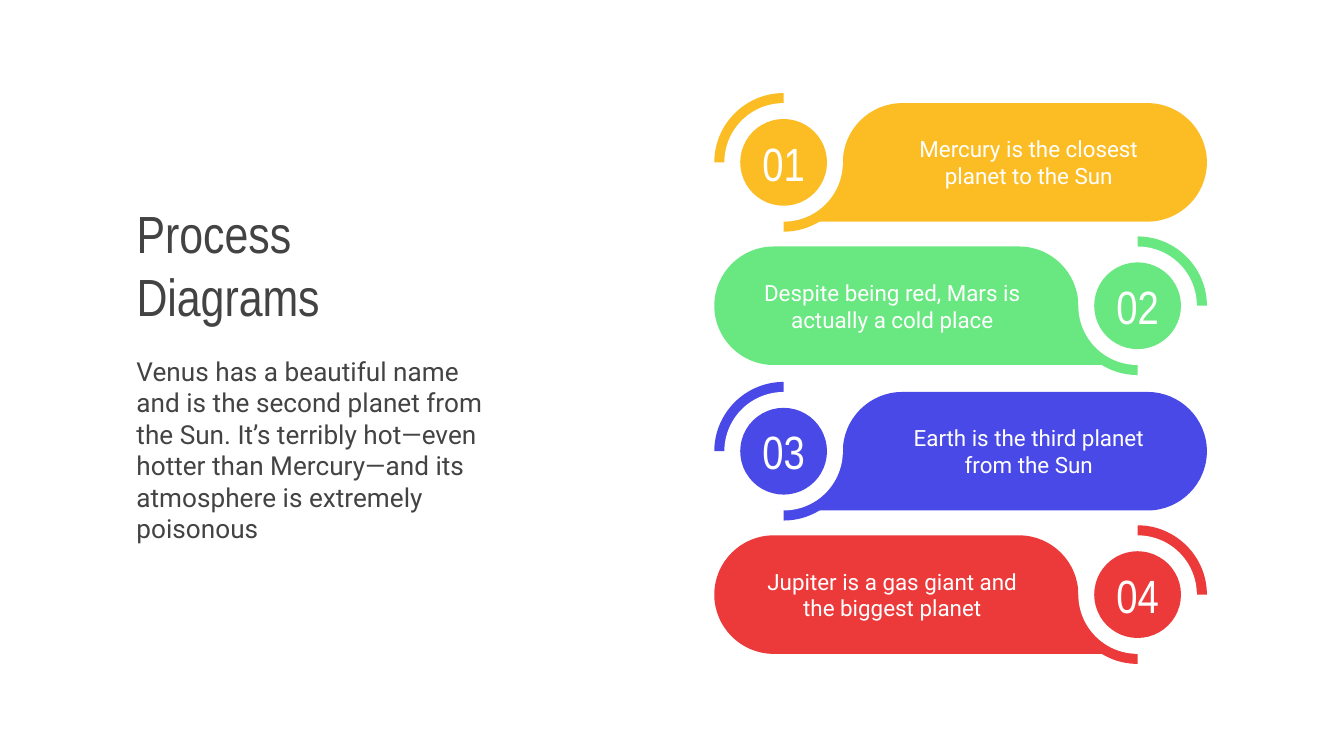
from math import cos, radians, sin

from pptx import Presentation
from pptx.dml.color import RGBColor
from pptx.enum.shapes import MSO_SHAPE
from pptx.enum.text import MSO_ANCHOR as ANCHOR, MSO_AUTO_SIZE as AUTO, PP_ALIGN as ALIGN
from pptx.oxml.ns import qn
from pptx.util import Cm, Pt

YELLOW = RGBColor(0xFC, 0xBD, 0x24)
GREEN = RGBColor(0x69, 0xE7, 0x81)
BLUE = RGBColor(0x49, 0x49, 0xE7)
RED = RGBColor(0xEC, 0x3A, 0x3B)
WHITE = RGBColor(0xFF, 0xFF, 0xFF)
GREY = RGBColor(0x43, 0x43, 0x43)

HEAD_FONT, BODY_FONT = "Arial Narrow", "Roboto"

RING_R = Cm(1.31)   # coloured quarter rings
BAR_R = Cm(1.12)    # bar ends and white disc
DISC_R = Cm(0.82)   # number disc
BEZIER = 0.55       # handle length of a quarter circle, per radius

STEPS = [
    ("01", "Mercury is the closest planet to the Sun", YELLOW),
    ("02", "Despite being red, Mars is actually a cold place", GREEN),
    ("03", "Earth is the third planet from the Sun", BLUE),
    ("04", "Jupiter is a gas giant and the biggest planet", RED),
]


def write(sp, text, font, size, color, align, margins, anchor=ANCHOR.MIDDLE):
    """Margins are left, top, right, bottom in centimetres."""
    tf = sp.text_frame
    tf.word_wrap, tf.auto_size, tf.vertical_anchor = True, AUTO.NONE, anchor
    tf.margin_left, tf.margin_top, tf.margin_right, tf.margin_bottom = map(Cm, margins)
    p = tf.paragraphs[0]
    p.text, p.alignment = text, align
    p.font.name, p.font.size, p.font.color.rgb = font, Pt(size), color


def paint(sp, color):
    sp.shadow.inherit = False
    sp.fill.solid()
    sp.fill.fore_color.rgb = color
    sp.line.fill.background()
    return sp


def on_circle(cx, cy, r, angle):
    """Degrees run clockwise from the right."""
    return cx + r * cos(radians(angle)), cy + r * sin(radians(angle))


def quarter(cx, cy, r, start, end):
    """Two handles and the end point of a quarter circle."""
    (x0, y0), (x1, y1) = on_circle(cx, cy, r, start), on_circle(cx, cy, r, end)
    return [(x0 + BEZIER * (x1 - cx), y0 + BEZIER * (y1 - cy)),
            (x1 + BEZIER * (x0 - cx), y1 + BEZIER * (y0 - cy)), (x1, y1)]


def add_outline(shapes, start, segments, color, mirror):
    """A segment is one point for a line, or three for a curve."""
    points = [mirror(pt) for segment in segments for pt in segment]
    builder = shapes.build_freeform(*mirror(start))
    builder.add_line_segments(points, close=True)
    sp = builder.convert_to_shape()
    # Merge the three points of each curve into one Bézier
    lines = iter(list(sp._element.iter(qn("a:lnTo"))))
    for segment in segments:
        first, *rest = [next(lines) for _ in segment]
        if rest:
            first.tag = qn("a:cubicBezTo")
            for line in rest:
                first.append(line[0])
                line.getparent().remove(line)
    return paint(sp, color)


def add_disc(shapes, cx, cy, r, color):
    return paint(shapes.add_shape(MSO_SHAPE.OVAL, cx - r, cy - r, 2 * r, 2 * r), color)


def add_step(slide, left, top, width, number, text, color, flip):
    """One bar with a numbered disc at its left, or at its right when flipped."""
    shapes = slide.shapes.add_group_shape().shapes
    cx, cy = left + RING_R, top + RING_R
    end_x = left + width - BAR_R

    def mirror(pt):
        return (2 * left + width - pt[0], pt[1]) if flip else pt

    # Bar with an S-shaped inner end
    bar = add_outline(shapes, (cx + 2 * BAR_R, cy - BAR_R), [
        quarter(cx + 2 * BAR_R, cy, BAR_R, 270, 180),
        quarter(cx, cy, BAR_R, 0, 90),
        [(end_x, cy + BAR_R)],
        quarter(end_x, cy, BAR_R, 90, 0),
        quarter(end_x, cy, BAR_R, 0, -90),
    ], color, mirror)
    margins = (0.76, 0.25, 2.03, 0.25) if flip else (2.03, 0.25, 0.76, 0.25)
    write(bar, text, BODY_FONT, 12, WHITE, ALIGN.CENTER, margins)

    # Quarter rings, cut out by the white disc
    for angle in (180, 0):
        add_outline(shapes, (cx, cy), [
            [on_circle(cx, cy, RING_R, angle)],
            quarter(cx, cy, RING_R, angle, angle + 90),
        ], color, mirror)
    disc_x, disc_y = mirror((cx, cy))
    add_disc(shapes, disc_x, disc_y, BAR_R, WHITE)

    # Number
    disc = add_disc(shapes, disc_x, disc_y, DISC_R, color)
    write(disc, number, HEAD_FONT, 25, WHITE, ALIGN.CENTER, (0, 0, 0, 0))


def add_steps(slide, left, top, width):
    for i, (number, text, color) in enumerate(STEPS):
        pair, flip = divmod(i, 2)
        step_top = top + pair * Cm(5.46) + flip * Cm(2.71)
        add_step(slide, left, step_top, width, number, text, color, flip)


def add_intro(slide, left, top, width):
    margins = (0.25, 0.25, 0.25, 0.25)
    # Title
    title = slide.shapes.title
    title.left, title.top, title.width, title.height = left, top, Cm(6.91), Cm(2.36)
    write(title, "Process Diagrams", HEAD_FONT, 28, GREY, ALIGN.LEFT, margins)
    # Description
    body = slide.shapes.add_textbox(left, top + Cm(2.66), width, Cm(4.01))
    write(body, "Venus has a beautiful name and is the second planet from the Sun. "
          "It’s terribly hot—even hotter than Mercury—and its atmosphere is "
          "extremely poisonous", BODY_FONT, 14, GREY, ALIGN.LEFT, margins, ANCHOR.TOP)


def main():
    prs = Presentation()
    prs.slide_width, prs.slide_height = Cm(25.4), Cm(14.29)
    slide = prs.slides.add_slide(prs.slide_layouts[5])
    add_steps(slide, Cm(13.5), Cm(1.76), Cm(9.31))
    add_intro(slide, Cm(2.33), Cm(3.81), Cm(7.32))
    prs.save("out.pptx")


if __name__ == "__main__":
    main()
